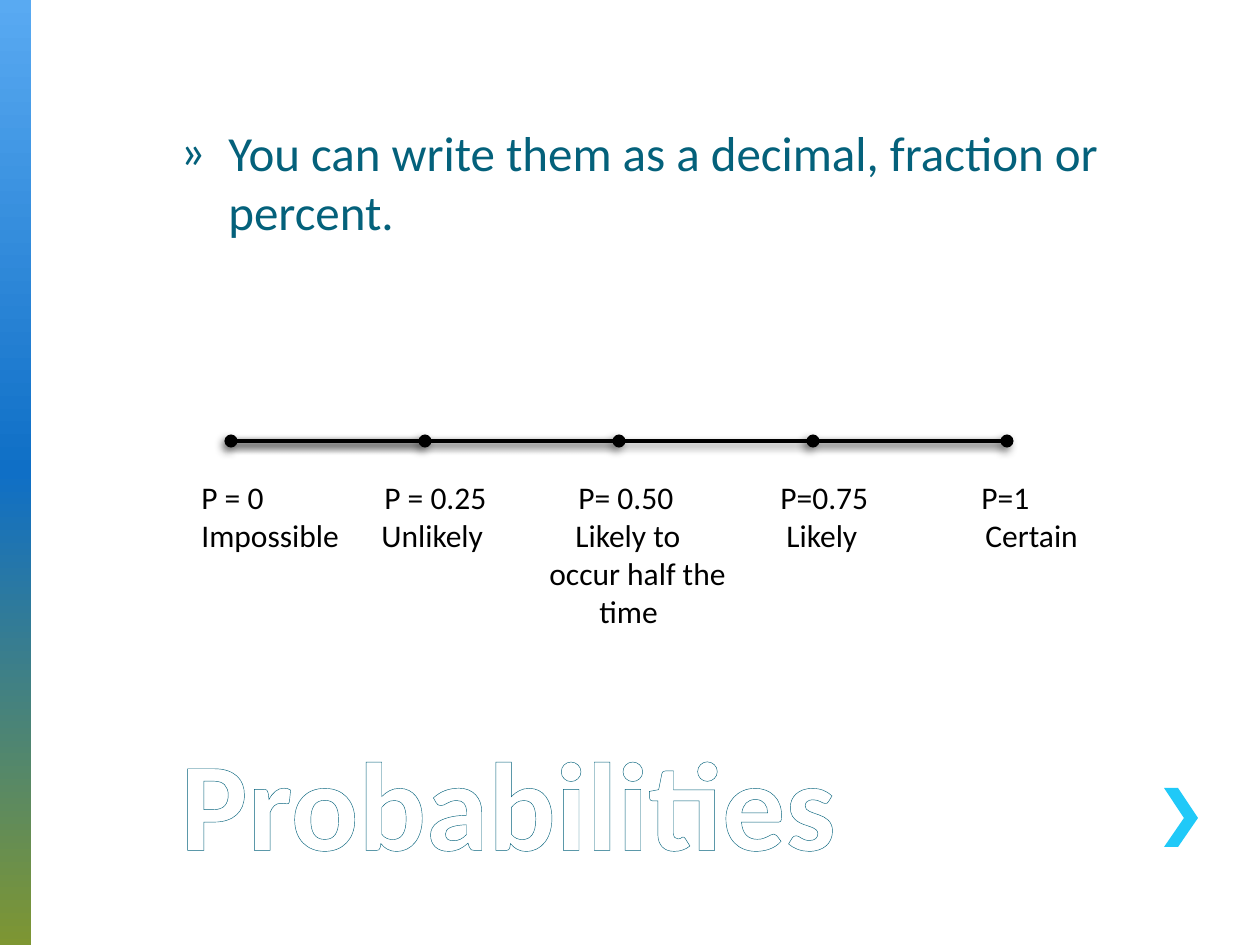
import pptx
import pptx.dml.color
import pptx.enum.shapes
import pptx.enum.text
import pptx.oxml
import pptx.oxml.ns
import pptx.util

PX = 914400 / 126
THEME = {
    "font": "Calibri",
    "text": pptx.dml.color.RGBColor.from_string("04617B"),
    "ink": pptx.dml.color.RGBColor.from_string("000000"),
    "title_fill": pptx.dml.color.RGBColor.from_string("FFFFFF"),
    "chevron": pptx.dml.color.RGBColor.from_string("20C9F8"),
    "bar_stops": {0: "59AAF2", 50: "0F6FC6", 100: "7E9632"},
    "title_size": pptx.util.Pt(72),
    "body_size": pptx.util.Pt(28),
    "label_size": pptx.util.Pt(18),
    "title_outline": pptx.util.Pt(1),
    "line_width": pptx.util.Pt(2.5),
    "shadow_blur": pptx.util.Pt(5),
    "shadow_distance": pptx.util.Pt(3),
}


def px(length):
    return pptx.util.Emu(round(length * PX))


def make_xml(tag, content="", **attributes):
    """Return a DrawingML element; content holds its children as XML text."""
    values = "".join(f' {name}="{value}"' for name, value in attributes.items())
    namespace = pptx.oxml.ns.nsdecls("a")
    return pptx.oxml.parse_xml(f"<a:{tag} {namespace}{values}>{content}</a:{tag}>")


deck = pptx.Presentation()
deck.slide_width, deck.slide_height = px(1260), px(945)
page = deck.slides.add_slide(deck.slide_layouts[5])

# Gradient bar on the left edge
bar = page.shapes.add_shape(pptx.enum.shapes.MSO_SHAPE.RECTANGLE, 0, 0, px(31), px(945))
bar.shadow.inherit = False
bar.line.fill.background()
stops = "".join(
    f'<a:gs pos="{percent * 1000}"><a:srgbClr val="{color}"/></a:gs>'
    for percent, color in THEME["bar_stops"].items())
geometry = bar.element.spPr.find(pptx.oxml.ns.qn("a:prstGeom"))
geometry.addnext(make_xml("gradFill", f'<a:gsLst>{stops}</a:gsLst><a:lin ang="5400000"/>'))

# Chevron beside the title
outline = page.shapes.build_freeform(1178, 788, scale=PX)
outline.add_line_segments([(1164, 788), (1184, 818), (1164, 847), (1178, 847), (1198, 818)])
chevron = outline.convert_to_shape()
chevron.shadow.inherit = False
chevron.fill.solid()
chevron.fill.fore_color.rgb = THEME["chevron"]
chevron.line.fill.background()

# Title and statement: place the boxes
title = page.shapes.title
for name, length in {"left": 168, "top": 725, "width": 998, "height": 157}.items():
    setattr(title, name, px(length))
title_format = {
    "auto_size": pptx.enum.text.MSO_AUTO_SIZE.NONE,
    "vertical_anchor": pptx.enum.text.MSO_ANCHOR.BOTTOM,
}
for name, value in title_format.items():
    setattr(title.text_frame, name, value)
title_para = title.text_frame.paragraphs[0]
title_para.alignment = pptx.enum.text.PP_ALIGN.LEFT

body = page.shapes.add_textbox(px(168), px(116), px(1029), px(609))
body.text_frame.word_wrap = True
body_para = body.text_frame.paragraphs[0]
bullet_format = body_para._p.get_or_add_pPr()
bullet_format.set("marL", str(px(48)))
bullet_format.set("indent", str(px(-48)))
bullet_format.append(make_xml("buFont", typeface=THEME["font"]))
bullet_format.append(make_xml("buChar", char="»"))

# Probability line: five marks at equal steps, darker where the lines overlap
marks = [231 + 194 * step for step in range(5)]
for start, end in [(0, 4), (0, 2), (0, 1), (4, 3)]:
    line = page.shapes.add_connector(
        pptx.enum.shapes.MSO_CONNECTOR.STRAIGHT,
        px(marks[start]), px(441), px(marks[end]), px(441))
    line.line.color.rgb = THEME["ink"]
    line.line.width = THEME["line_width"]
    stroke = line.element.spPr.find(pptx.oxml.ns.qn("a:ln"))
    dots = ["headEnd", "tailEnd"] if end == 4 else ["tailEnd"]
    for dot in dots:
        stroke.append(make_xml(dot, type="oval"))
    shadow = make_xml(
        "outerShdw", f'<a:srgbClr val="{THEME["ink"]}"><a:alpha val="45000"/></a:srgbClr>',
        blurRad=THEME["shadow_blur"], dist=THEME["shadow_distance"], dir=135 * 60000)
    effects = make_xml("effectLst")
    effects.append(shadow)
    line.element.spPr.append(effects)

# Labels under the marks: each word group starts at its own x on the page
label_rows = [
    {201: "P = 0", 384: "P = 0.25", 578: "P= 0.50", 780: "P=0.75", 981: "P=1"},
    {201: "Impossible", 381: "Unlikely", 575: "Likely to", 786: "Likely", 985: "Certain"},
    {549: "occur half the"},
    {599: "time"},
]
label_left = 201
labels = page.shapes.add_textbox(px(189), px(472), px(914), px(165))
labels.text_frame.word_wrap = True
labels.text_frame.auto_size = pptx.enum.text.MSO_AUTO_SIZE.SHAPE_TO_FIT_TEXT

label_runs = []
for index, row in enumerate(label_rows):
    para = labels.text_frame.add_paragraph() if index else labels.text_frame.paragraphs[0]
    stops = "".join(
        f'<a:tab pos="{px(x - label_left)}" algn="l"/>' for x in row if x > label_left)
    para._p.get_or_add_pPr().append(make_xml("tabLst", stops))
    text = "".join(word if x == label_left else "\t" + word for x, word in row.items())
    label_runs.append((para, text, "label_size", "ink", False))

# Write every text with its type size and colour
text_runs = [
    (title_para, "Probabilities", "title_size", "title_fill", True),
    (body_para, "You can write them as a decimal, fraction or percent.",
     "body_size", "text", False),
    *label_runs,
]
for para, text, size, color, bold in text_runs:
    span = para.add_run()
    span.text = text
    for name, value in {"name": THEME["font"], "size": THEME[size], "bold": bold}.items():
        setattr(span.font, name, value)
    span.font.color.rgb = THEME[color]

# Outline the title letters; the outline must stand before the fill
title_outline = make_xml(
    "ln", f'<a:solidFill><a:srgbClr val="{THEME["text"]}"/></a:solidFill>',
    w=THEME["title_outline"])
title_para.runs[0]._r.get_or_add_rPr().insert(0, title_outline)

deck.save("out.pptx")
